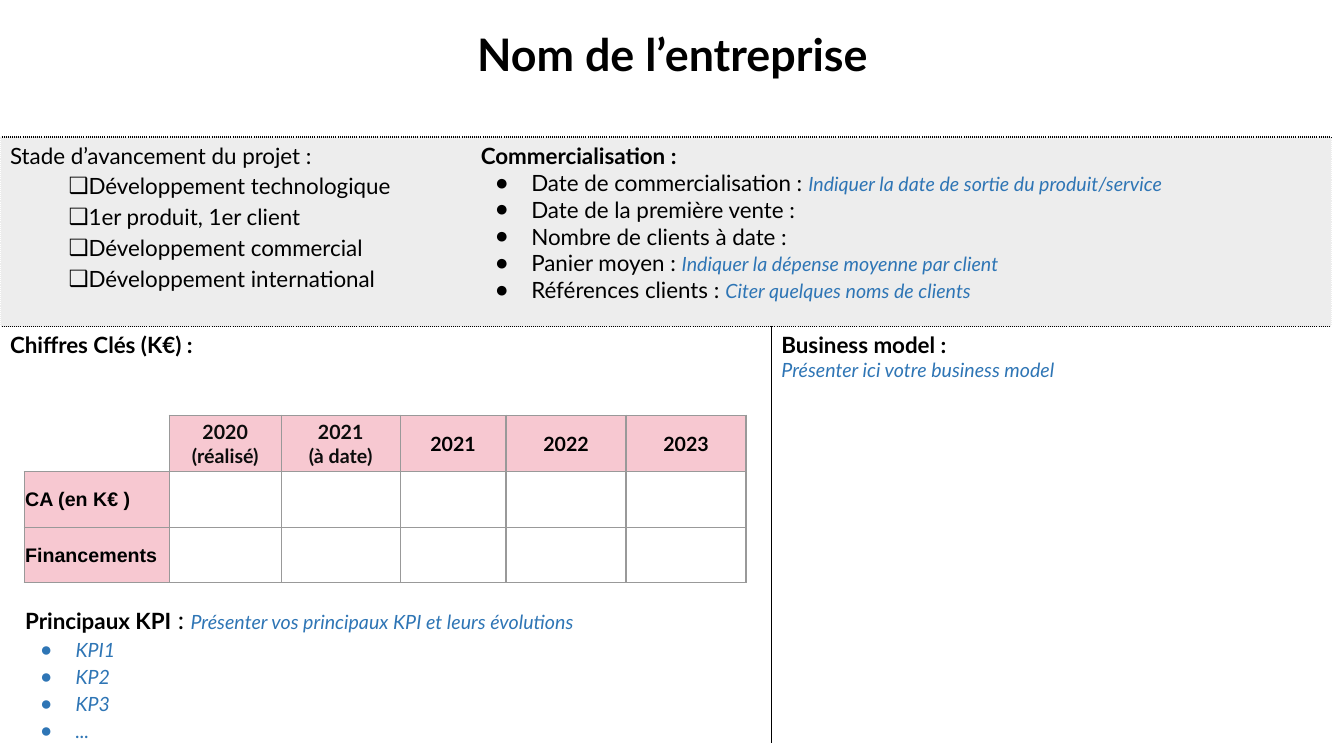
from dataclasses import dataclass

from lxml.etree import SubElement
from pptx import Presentation
from pptx.dml.color import RGBColor
from pptx.enum.shapes import MSO_SHAPE as Shape
from pptx.enum.text import MSO_ANCHOR as Anchor, MSO_AUTO_SIZE as AutoSize, PP_ALIGN as Align
from pptx.oxml import parse_xml
from pptx.oxml.ns import nsdecls, qn
from pptx.util import Inches, Pt

WIDTH, HEIGHT = Inches(13.33), Inches(7.5)


@dataclass(frozen=True)
class Theme:
    font: str = "Lato"
    row_font: str = "Arial"
    ink: str = "000000"
    header_ink: str = "0C0C0C"
    hint: str = "2E75B5"
    white: str = "FFFFFF"
    band: str = "EDEDED"
    accent: str = "E23757"
    accent_alpha: int = 27
    grid: str = "999999"
    title_size: int = 32
    colon_size: int = 18
    text_size: int = 16
    small_size: int = 14


THEME = Theme()
HINT = dict(size=THEME.small_size, color=THEME.hint, italic=True)
BOLD = dict(bold=True)


# Lengths as percentages of the slide
def across(share):
    return round(WIDTH * share / 100)


def down(share):
    return round(HEIGHT * share / 100)


def area(left, top, width, height):
    return across(left), down(top), across(width), down(height)


# Text
def bullet(paragraph, char, color, left, hanging):
    props = paragraph._p.get_or_add_pPr()
    props.set("marL", str(Inches(left)))
    props.set("indent", str(Inches(-hanging)))
    if char is None:
        SubElement(props, qn("a:buNone"))
        return
    SubElement(SubElement(props, qn("a:buClr")), qn("a:srgbClr"), val=color)
    SubElement(props, qn("a:buFont"), typeface="Arial")
    SubElement(props, qn("a:buChar"), char=char)


def write(frame, lines, size=THEME.text_size, color=THEME.ink, font=THEME.font, bold=False,
          italic=False, align=Align.LEFT, spacing=1.0, char=None, bullet_color=THEME.ink,
          left=0, hanging=0, more=False):
    """Each line is a list of (text, format) runs; more=True adds below existing text."""
    frame.word_wrap = True
    for index, runs in enumerate(lines):
        paragraph = frame.add_paragraph() if more or index else frame.paragraphs[0]
        bullet(paragraph, char, bullet_color, left, hanging)
        paragraph.alignment = align
        paragraph.line_spacing = spacing
        paragraph.space_before = paragraph.space_after = Pt(0)
        for text, own in runs:
            look = dict(size=size, color=color, font=font, bold=bold, italic=italic) | own
            run = paragraph.add_run()
            run.text = text
            run.font.size = Pt(look["size"])
            run.font.name = look["font"]
            run.font.bold = look["bold"]
            run.font.italic = look["italic"]
            run.font.color.rgb = RGBColor.from_string(look["color"])


def plain(*texts):
    return [[(text, {})] for text in texts]


# Tables
def paint(cell, color=None, alpha=100):
    if color is None:
        cell.fill.background()
        return
    cell.fill.solid()
    cell.fill.fore_color.rgb = RGBColor.from_string(color)
    if alpha < 100:
        tint = cell._tc.tcPr.find(f".//{qn('a:srgbClr')}")
        SubElement(tint, qn("a:alpha"), val=str(alpha * 1000))


def borders(cell, **sides):
    """Sides L, R, T, B as (color, dash); a color of None hides the side."""
    props = cell._tc.get_or_add_tcPr()
    for index, side in enumerate("LRTB"):
        color, dash = sides[side]
        stroke = f'<a:solidFill><a:srgbClr val="{color}"/></a:solidFill>' if color else "<a:noFill/>"
        props.insert(index, parse_xml(
            f'<a:ln{side} {nsdecls("a")} w="{Pt(1)}">{stroke}<a:prstDash val="{dash}"/></a:ln{side}>'))


def add_grid(slide, left, top, columns, rows):
    frame = slide.shapes.add_table(len(rows), len(columns),
                                   *area(left, top, sum(columns), sum(rows)))
    table = frame.table
    table.first_row = table.horz_banding = False
    for column, share in zip(table.columns, columns):
        column.width = across(share)
    for row, share in zip(table.rows, rows):
        row.height = down(share)
    return table


def add_sections(slide):
    sections = add_grid(slide, 0, 18.13, [57.39, 41.71], [25.07, 55.07])
    dotted, edge = (THEME.ink, "sysDot"), (THEME.white, "solid")
    divider, soft = (THEME.ink, "solid"), (THEME.white, "sysDot")
    stage, stage_end = sections.cell(0, 0), sections.cell(0, 1)
    figures, model = sections.cell(1, 0), sections.cell(1, 1)
    stage.merge(stage_end)
    for cell in (stage, stage_end):
        paint(cell, THEME.band)
        borders(cell, L=soft, R=soft, T=dotted, B=dotted)
    for cell, left, right in ((figures, edge, divider), (model, divider, edge)):
        paint(cell, THEME.white)
        borders(cell, L=left, R=right, T=dotted, B=edge)

    write(stage.text_frame, plain("Stade d’avancement du projet :"))
    write(stage.text_frame, plain("Développement technologique", "1er produit, 1er client",
                                  "Développement commercial", "Développement international"),
          char="❑", left=0.69, hanging=0.11, spacing=1.15, more=True)
    write(figures.text_frame, plain("Chiffres Clés (K€) :"), bold=True)
    write(model.text_frame, [[("Business model :", BOLD)],
                             [("Présenter ici votre business model", HINT)]])


def add_key_figures(slide):
    years = [["2020 (réalisé)"], ["2021", "(à date)"], ["2021"], ["2022"], ["2023"]]
    measures = ["CA (en K€ )", "Financements"]
    table = add_grid(slide, 1.8, 54.93, [10.8, 8.33, 8.85, 7.88, 8.93, 8.93], [7.47, 7.33, 7.33])
    line, hidden = (THEME.grid, "solid"), (None, "solid")
    for r in range(len(measures) + 1):
        for c in range(len(years) + 1):
            cell = table.cell(r, c)
            corner, heading = r == c == 0, (r == 0) != (c == 0)
            outer = hidden if corner else line
            paint(cell, THEME.accent if heading else None, THEME.accent_alpha)
            borders(cell, L=outer, T=outer, R=line, B=line)
            if not heading:
                continue
            cell.vertical_anchor = Anchor.MIDDLE
            cell.margin_left = cell.margin_right = cell.margin_top = Inches(0.01)
            cell.margin_bottom = 0
            if r == 0:
                write(cell.text_frame, plain(*years[c - 1]), size=THEME.small_size, bold=True,
                      color=THEME.header_ink if c < 3 else THEME.ink, align=Align.CENTER)
            else:
                write(cell.text_frame, plain(measures[r - 1]), size=THEME.small_size,
                      bold=True, font=THEME.row_font)


# Placeholders and KPI panel
def place(placeholder, anchor, *shares):
    placeholder.left, placeholder.top, placeholder.width, placeholder.height = area(*shares)
    frame = placeholder.text_frame
    frame.auto_size = AutoSize.NONE
    frame.vertical_anchor = anchor
    return frame


def add_sales(body):
    sales = place(body, Anchor.TOP, 35.03, 18.13, 63.17, 23.47)
    write(sales, plain("Commercialisation :"), bold=True)
    write(sales, [
        [("Date de commercialisation : ", {}),
         ("Indiquer la date de sortie du produit/service", HINT)],
        [("Date de la première vente :", {})],
        [("Nombre de clients à date :", {})],
        [("Panier moyen : ", {}), ("Indiquer la dépense moyenne par client", HINT)],
        [("Références clients : ", {}), ("Citer quelques noms de clients", HINT)],
    ], char="●", left=0.5, hanging=0.36, more=True)


def add_kpis(slide):
    panel = slide.shapes.add_shape(Shape.RECTANGLE, *area(1.13, 78.67, 53.71, 18.13))
    panel.shadow.inherit = False
    panel.fill.solid()
    panel.fill.fore_color.rgb = RGBColor.from_string(THEME.white)
    panel.line.fill.background()
    panel.text_frame.vertical_anchor = Anchor.TOP
    write(panel.text_frame, [[("Principaux KPI", BOLD), (" : ", dict(size=THEME.colon_size)),
                              ("Présenter vos principaux KPI et leurs évolutions", HINT)]],
          spacing=1.15)
    write(panel.text_frame, plain("KPI1", "KP2", "KP3", "..."), **HINT, spacing=1.15,
          char="●", bullet_color=THEME.hint, left=0.5, hanging=0.35, more=True)


def main():
    deck = Presentation()
    deck.slide_width, deck.slide_height = WIDTH, HEIGHT
    slide = deck.slides.add_slide(deck.slide_layouts[1])
    title, body = slide.shapes.title, slide.placeholders[1]

    add_sections(slide)
    add_key_figures(slide)
    # The list lies over the grey band
    body.element.getparent().append(body.element)
    add_sales(body)
    add_kpis(slide)
    write(place(title, Anchor.MIDDLE, 12.53, 3.47, 75.02, 8.13), plain("Nom de l’entreprise"),
          size=THEME.title_size, bold=True, align=Align.CENTER, spacing=0.9)
    deck.save("out.pptx")


if __name__ == "__main__":
    main()
